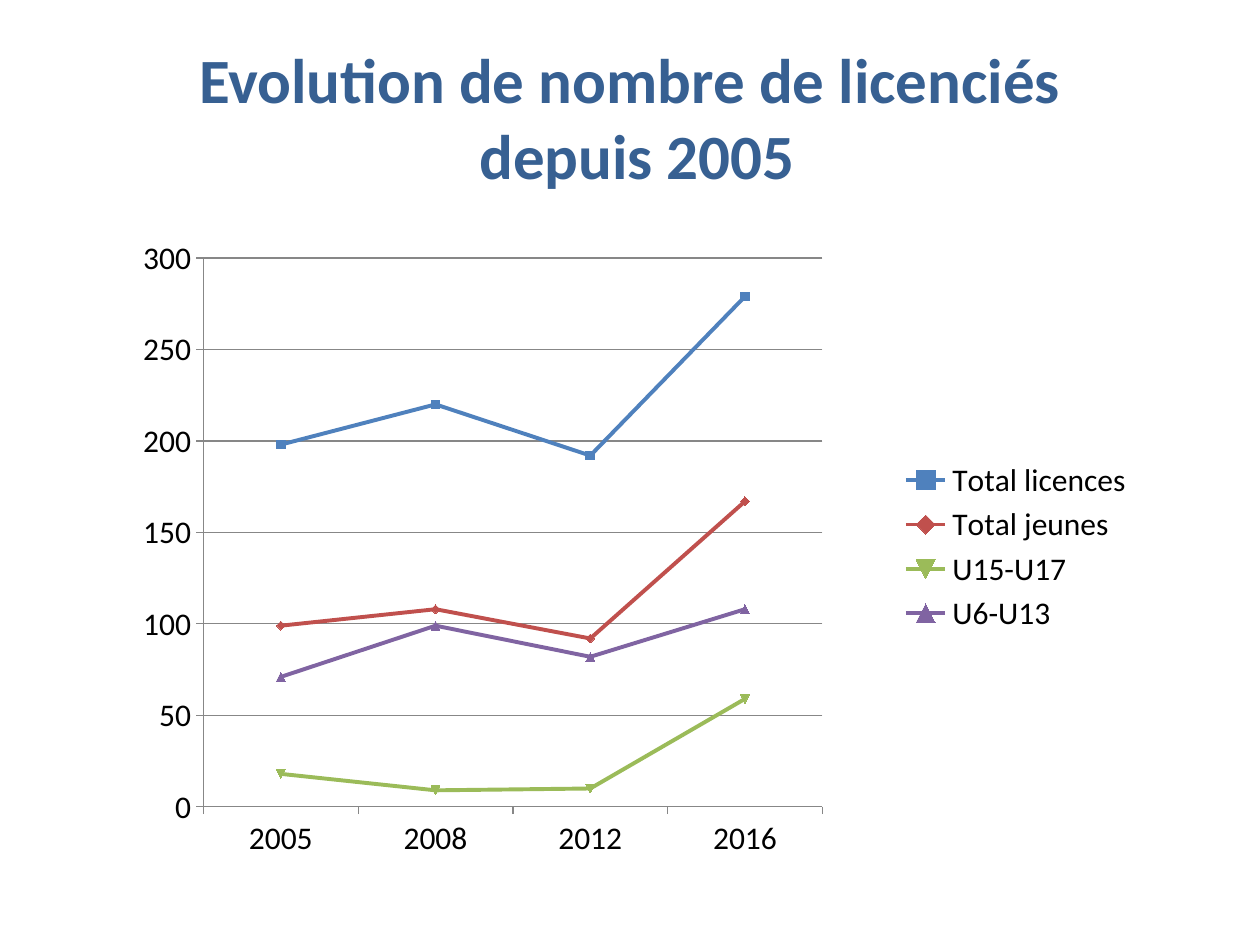
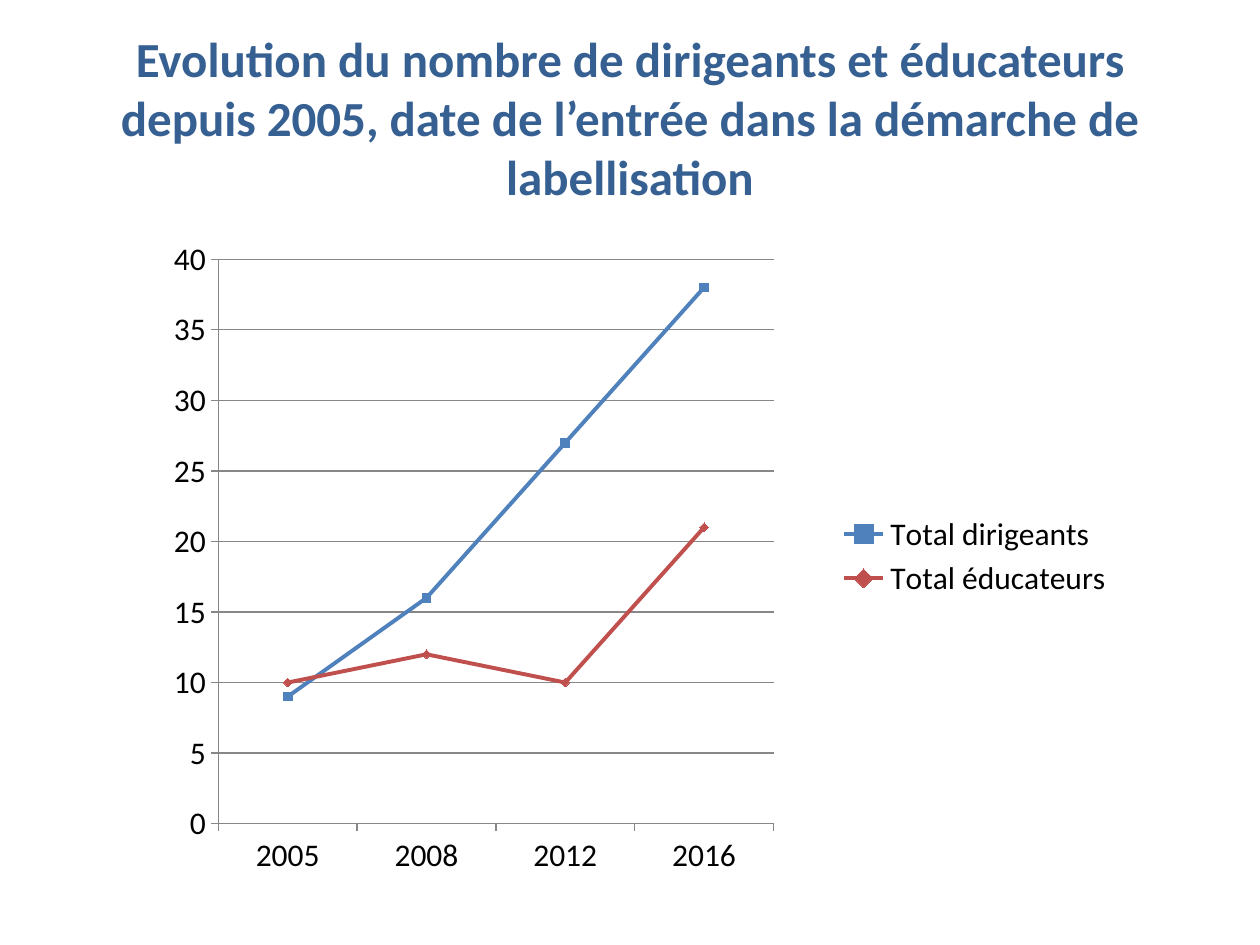
from dataclasses import dataclass

from lxml import etree
from pptx import Presentation
from pptx import util as u
from pptx.chart.data import CategoryChartData
from pptx.dml.color import RGBColor
from pptx.enum import chart as charts
from pptx.enum import text
from pptx.oxml.ns import qn

FONT = "Calibri"
TITLE_BLUE = RGBColor(0x37, 0x60, 0x92)
BLACK = RGBColor(0x00, 0x00, 0x00)
AXIS_GREY = RGBColor(0x87, 0x87, 0x87)
BLUE = RGBColor(0x4F, 0x81, 0xBD)
RED = RGBColor(0xC0, 0x50, 0x4D)
GREEN = RGBColor(0x9B, 0xBB, 0x59)
PURPLE = RGBColor(0x80, 0x64, 0xA2)

YEARS = ("2005", "2008", "2012", "2016")


@dataclass(frozen=True)
class Curve:
    name: str
    values: tuple[int, ...]
    colour: RGBColor


@dataclass(frozen=True)
class ChartPage:
    title: str
    title_size: int
    frame: tuple[float, float, float, float]  # left, top, width, height in inches
    plot_area: tuple[float, float, float, float]  # x, y, w, h as shares of the frame
    top_value: int
    step: int
    curves: tuple[Curve, ...]


PAGES = (
    ChartPage(
        "Evolution de nombre de licenciés\n depuis 2005", 36,
        (0.83, 1.7, 8.27, 5.28), (0.095, 0.066, 0.594, 0.825), 300, 50,
        (
            Curve("Total licences", (198, 220, 192, 279), BLUE),
            Curve("Total jeunes", (99, 108, 92, 167), RED),
            Curve("U15-U17", (18, 9, 10, 59), GREEN),
            Curve("U6-U13", (71, 99, 82, 108), PURPLE),
        ),
    ),
    ChartPage(
        "Evolution du nombre de dirigeants et éducateurs depuis 2005, "
        "date de l’entrée dans la démarche de labellisation", 28,
        (1.14, 1.7, 7.8, 5.43), (0.076, 0.066, 0.565, 0.825), 40, 5,
        (
            Curve("Total dirigeants", (9, 16, 27, 38), BLUE),
            Curve("Total éducateurs", (10, 12, 10, 21), RED),
        ),
    ),
)


def add_title(page, words: str, *, size: int, colour: RGBColor = TITLE_BLUE,
              bold: bool = True) -> None:
    """Centred title; a newline in the words becomes a line break."""
    box = page.shapes.add_textbox(u.Inches(0.5), u.Inches(0.3), u.Inches(9), u.Inches(1.25))
    frame = box.text_frame
    frame.word_wrap = True
    frame.vertical_anchor = text.MSO_ANCHOR.MIDDLE
    para = frame.paragraphs[0]
    para.alignment = text.PP_ALIGN.CENTER
    for number, line in enumerate(words.split("\n")):
        if number:
            para.add_line_break()
        span = para.add_run()
        span.text = line
        span.font.name = FONT
        span.font.size = u.Pt(size)
        span.font.bold = bold
        span.font.color.rgb = colour


def set_line(line, colour: RGBColor, width: float) -> None:
    line.color.rgb = colour
    line.width = u.Pt(width)


def place_plot_area(chart, shares: tuple[float, ...]) -> None:
    """Fix the inner plot area, which python-pptx leaves automatic."""
    area = chart.plots[0]._element.getparent()
    for old in area.findall(qn("c:layout")):
        area.remove(old)
    layout = etree.Element(qn("c:layout"))
    manual = etree.SubElement(layout, qn("c:manualLayout"))
    settings = [("layoutTarget", "inner"), ("xMode", "edge"), ("yMode", "edge")]
    settings += zip("xywh", map(str, shares))
    for tag, value in settings:
        etree.SubElement(manual, qn(f"c:{tag}"), val=value)
    area.insert(0, layout)


def add_line_chart(page, content: ChartPage) -> None:
    data = CategoryChartData()
    data.categories = YEARS
    for curve in content.curves:
        data.add_series(curve.name, curve.values)
    chart = page.shapes.add_chart(
        charts.XL_CHART_TYPE.LINE_MARKERS, *map(u.Inches, content.frame), data).chart
    chart.has_title = False
    chart.font.name = FONT
    chart.font.size = u.Pt(18)
    chart.font.color.rgb = BLACK
    place_plot_area(chart, content.plot_area)

    # Legend
    chart.has_legend = True
    chart.legend.position = charts.XL_LEGEND_POSITION.RIGHT
    chart.legend.include_in_layout = False

    # Axes and gridlines
    for axis in (chart.category_axis, chart.value_axis):
        axis.major_tick_mark = charts.XL_TICK_MARK.OUTSIDE
        axis.minor_tick_mark = charts.XL_TICK_MARK.NONE
        set_line(axis.format.line, AXIS_GREY, 0.75)
    values = chart.value_axis
    values.minimum_scale = 0
    values.maximum_scale = content.top_value
    values.major_unit = content.step
    values.has_major_gridlines = True
    set_line(values.major_gridlines.format.line, AXIS_GREY, 0.75)

    # Curves
    plot = chart.plots[0]
    plot.vary_by_categories = False
    for series, curve in zip(plot.series, content.curves):
        series.smooth = False
        set_line(series.format.line, curve.colour, 2.25)
        fill = series.marker.format.fill
        fill.solid()
        fill.fore_color.rgb = curve.colour


def main() -> None:
    deck = Presentation()
    deck.slide_width = u.Inches(10)
    deck.slide_height = u.Inches(7.5)
    blank = deck.slide_layouts[6]
    for content in PAGES:
        page = deck.slides.add_slide(blank)
        add_title(page, content.title, size=content.title_size)
        add_line_chart(page, content)
    deck.save("out.pptx")


if __name__ == "__main__":
    main()
